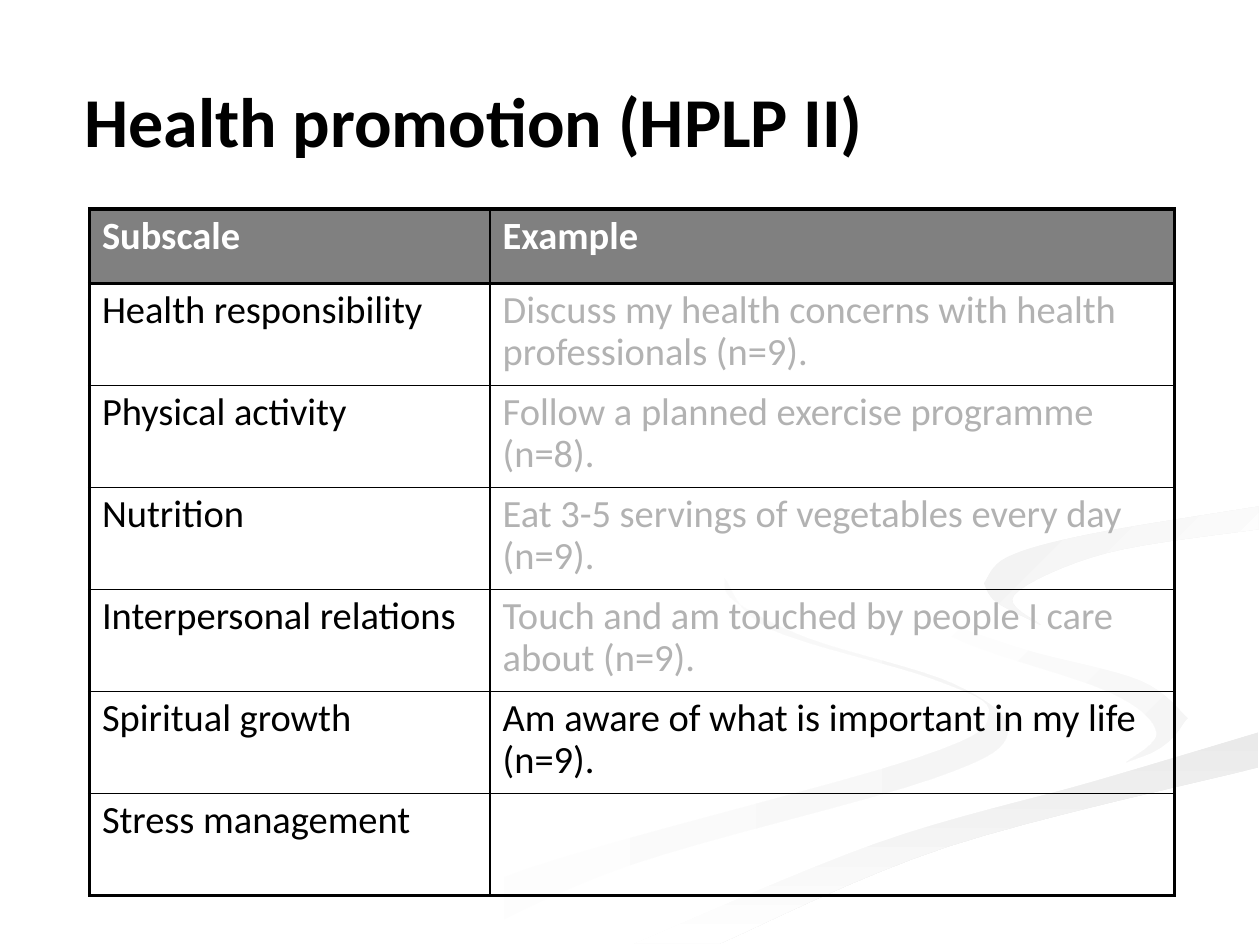
from lxml.etree import SubElement
from pptx import Presentation
from pptx.dml.color import RGBColor
from pptx.enum.text import MSO_ANCHOR, MSO_AUTO_SIZE, PP_ALIGN
from pptx.oxml.ns import qn
from pptx.util import Inches, Pt

COLORS = {
    "black": "000000", "white": "FFFFFF", "header": "808080", "faded": "B2B2B2",
    "pale": "F5F5F5", "mist": "F1F1F1", "silver": "EAEAEA",
}
FONT = "Calibri"
TITLE = "Health promotion (HPLP II)"
ROWS = [
    ("Subscale", "Example"),
    ("Health responsibility", "Discuss my health concerns with health professionals (n=9)."),
    ("Physical activity", "Follow a planned exercise programme (n=8)."),
    ("Nutrition", "Eat 3-5 servings of vegetables every day (n=9)."),
    ("Interpersonal relations", "Touch and am touched by people I care about (n=9)."),
    ("Spiritual growth", "Am aware of what is important in my life (n=9)."),
    ("Stress management", ""),
]
FADED_ROWS = range(1, 5)
COLUMN_WIDTHS = (3.18, 5.43)
HEADER_HEIGHT, ROW_HEIGHT = 0.59, 0.81
THICK, THIN = 2.25, 1

# Edges shared by neighbouring ribbons, as knots of smooth curves in inches
BEND = [(7.25, 4.64), (7.45, 4.9), (8.12, 5.15), (9.05, 5.4), (9.43, 5.7)]
ROAD = [(5.03, 7.49), (6.96, 6.69), (8.68, 6.2), (9.99, 5.81)]
HORIZON = [(7.81, 4.63), (8, 4.42), (8.65, 4.24), (9.99, 4.02)]

# Start colour, end colour, clockwise angle, edges
RIBBONS = [
    ("white", "pale", 0, [
        [(5.75, 4.59), (5.83, 4.77), (6.42, 5.07), (7.57, 5.43), (8, 5.81),
         (7.4, 6.18), (4.99, 6.87), (3.61, 7.49)],
        [(3, 7.49), (4.17, 6.9), (7.27, 6.02), (7.85, 5.66), (7.41, 5.39),
         (6.11, 4.99), (5.75, 4.59)]]),
    ("white", "pale", 45, [
        BEND,
        [(9.43, 5.7), (9.32, 5.89), (8.94, 6.05)],
        [(8.94, 6.05), (9.18, 5.81), (8.8, 5.49), (7.55, 5.05), (7.25, 4.64)]]),
    ("silver", "white", 90, [ROAD, [(9.99, 6.09), (7.52, 6.72), (5.71, 7.49)]]),
    ("white", "white", 0, [
        BEND,
        [(9.43, 5.7), (9.02, 6.03), (7.43, 6.43), (4.77, 7.49)],
        ROAD,
        [(9.99, 5.38), (8.48, 5.03), (7.81, 4.63)],
        HORIZON,
        [(9.99, 3.87), (8.51, 4.11), (7.55, 4.32), (7.25, 4.64)]]),
    ("mist", "white", 45, [
        HORIZON,
        [(9.99, 4.2), (8.78, 4.39), (8.05, 4.72), (8.26, 4.96)],
        [(8.26, 4.96), (7.91, 4.78), (7.81, 4.63)]]),
]
STEPS = 8


def rgb(name):
    return RGBColor.from_string(COLORS[name])


def style(paragraph, size, color, bold):
    font = paragraph.font
    font.name, font.size, font.bold = FONT, Pt(size), bold
    font.color.rgb = rgb(color)


def smooth(knots):
    """Sample a Catmull-Rom curve that passes through all knots."""
    padded = [knots[0], *knots, knots[-1]]
    points = [knots[0]]
    for quad in zip(padded, padded[1:], padded[2:], padded[3:]):
        for step in range(1, STEPS + 1):
            t = step / STEPS
            points.append(tuple(
                b + t / 2 * (c - a + t * (2 * a - 5 * b + 4 * c - d + t * (3 * (b - c) + d - a)))
                for a, b, c, d in zip(*quad)))
    return points


def add_ribbon(slide, start, end, angle, edges):
    points = [(Inches(x), Inches(y)) for edge in edges for x, y in smooth(edge)]
    builder = slide.shapes.build_freeform(*points[0])
    builder.add_line_segments(points[1:], close=True)
    shape = builder.convert_to_shape()
    shape.shadow.inherit = False
    shape.line.fill.background()
    if start == end:
        shape.fill.solid()
        shape.fill.fore_color.rgb = rgb(start)
        return
    shape.fill.gradient()
    shape.fill.gradient_angle = (360 - angle) % 360
    for stop, color in zip(shape.fill.gradient_stops, (start, end)):
        stop.color.rgb = rgb(color)


def set_borders(cell, widths):
    """Draw black borders; widths in points for left, right, top, bottom."""
    properties = cell._tc.get_or_add_tcPr()
    for side, width in zip("LRTB", widths):
        line = SubElement(properties, qn(f"a:ln{side}"), w=str(Pt(width)))
        SubElement(SubElement(line, qn("a:solidFill")), qn("a:srgbClr"), val=COLORS["black"])


def fill_cell(cell, text, row, column):
    header, last = row == 0, row == len(ROWS) - 1
    set_borders(cell, (
        THICK if column == 0 else THIN,
        THICK if column == 1 else THIN,
        THICK if row <= 1 else THIN,
        THICK if header or last else THIN,
    ))
    if header:
        cell.fill.solid()
        cell.fill.fore_color.rgb = rgb("header")
    else:
        cell.fill.background()
    cell.text_frame.text = text
    paragraph = cell.text_frame.paragraphs[0]
    paragraph.line_spacing = 0.9
    faded = column == 1 and row in FADED_ROWS
    style(paragraph, 22, "white" if header else "faded" if faded else "black", header)


def add_subscale_table(slide):
    height = HEADER_HEIGHT + ROW_HEIGHT * (len(ROWS) - 1)
    table = slide.shapes.add_table(
        len(ROWS), len(COLUMN_WIDTHS), Inches(0.71), Inches(1.66),
        Inches(sum(COLUMN_WIDTHS)), Inches(height)).table
    table.horz_banding = False
    for column, width in zip(table.columns, COLUMN_WIDTHS):
        column.width = Inches(width)
    for row, texts in enumerate(ROWS):
        table.rows[row].height = Inches(ROW_HEIGHT if row else HEADER_HEIGHT)
        for column, text in enumerate(texts):
            fill_cell(table.cell(row, column), text, row, column)


def add_title(slide):
    title = slide.shapes.title
    title.left, title.top, title.width, title.height = map(Inches, (0.67, 0.28, 7.43, 1))
    frame = title.text_frame
    frame.text = TITLE
    frame.auto_size = MSO_AUTO_SIZE.NONE
    frame.vertical_anchor = MSO_ANCHOR.BOTTOM
    frame.margin_left = frame.margin_right = frame.margin_top = frame.margin_bottom = 0
    paragraph = frame.paragraphs[0]
    paragraph.alignment = PP_ALIGN.LEFT
    style(paragraph, 40, "black", True)


def main():
    presentation = Presentation()
    presentation.slide_width, presentation.slide_height = Inches(10), Inches(7.5)
    slide = presentation.slides.add_slide(presentation.slide_layouts[5])
    for ribbon in RIBBONS:
        add_ribbon(slide, *ribbon)
    add_title(slide)
    add_subscale_table(slide)
    presentation.save("out.pptx")


if __name__ == "__main__":
    main()
